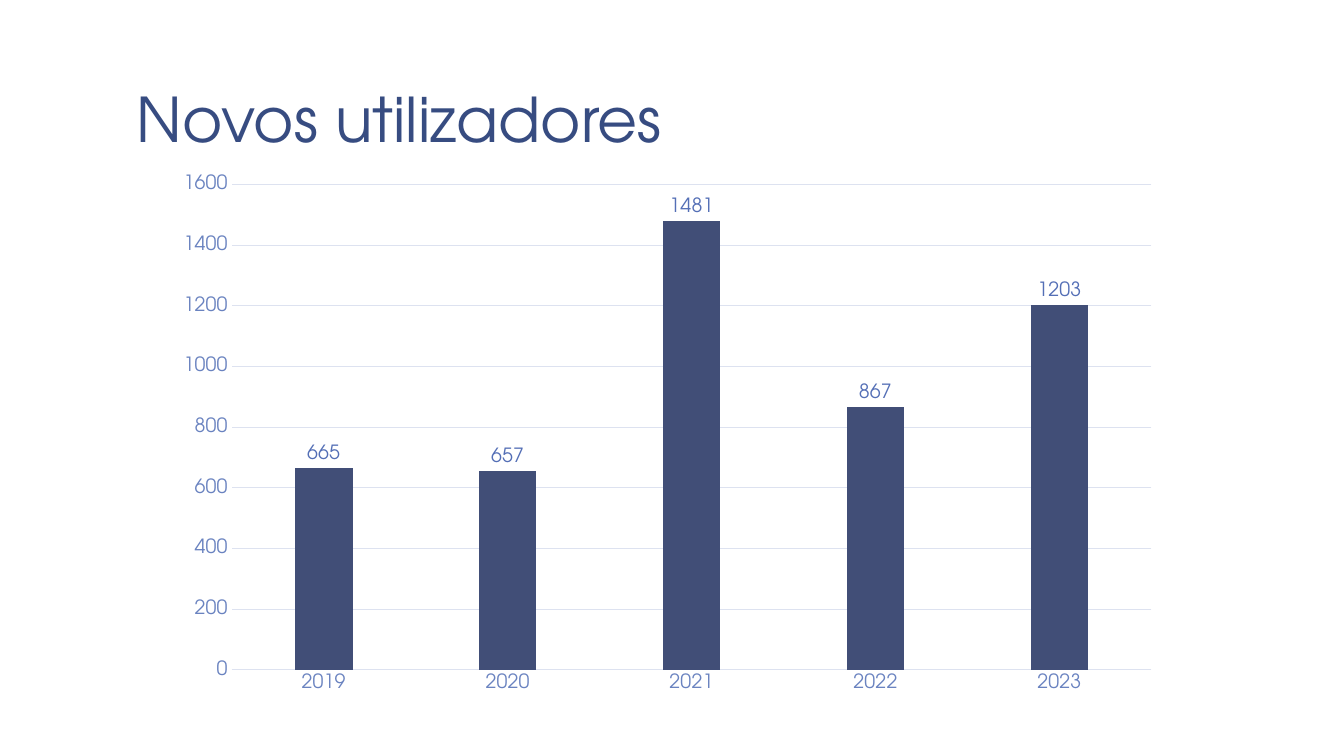
from pptx import Presentation
from pptx.chart import data
from pptx.dml.color import RGBColor
from pptx.enum import chart as ch, text
from pptx.util import Inches, Pt

FACE = "TeX Gyre Adventor"
HUES = {"title": "374C81", "bar": "414E77", "axis": "6A83C0",
        "label": "546FB6", "grid": "DDE2F0"}
YEARS = ["2019", "2020", "2021", "2022", "2023"]
USERS = [665, 657, 1481, 867, 1203]


def hue(key):
    return RGBColor.from_string(HUES[key])


def style(font, size, key):
    font.name = FACE
    font.size = Pt(size)
    font.bold = False
    font.color.rgb = hue(key)


def rule(line):
    line.color.rgb = hue("grid")
    line.width = Pt(0.75)


def add_title(slide, words):
    title = slide.shapes.title
    title.left, title.top = Inches(1.22), Inches(0.08)
    title.width, title.height = Inches(11.11), Inches(1.53)
    frame = title.text_frame
    frame.text = words
    frame.word_wrap = True
    frame.auto_size = text.MSO_AUTO_SIZE.NONE
    frame.vertical_anchor = text.MSO_ANCHOR.BOTTOM
    frame.margin_left = frame.margin_right = Inches(0.13)
    frame.margin_top = frame.margin_bottom = Inches(0.07)
    para = frame.paragraphs[0]
    para.alignment = text.PP_ALIGN.LEFT
    para.line_spacing = 0.85
    style(para.runs[0].font, 44, "title")


def style_axis(axis):
    axis.major_tick_mark = axis.minor_tick_mark = ch.XL_TICK_MARK.NONE
    style(axis.tick_labels.font, 14, "axis")


def add_bars(slide):
    table = data.CategoryChartData()
    table.categories = YEARS
    table.add_series("Series 1", USERS)
    chart = slide.shapes.add_chart(
        ch.XL_CHART_TYPE.COLUMN_CLUSTERED, Inches(1.62), Inches(1.63),
        Inches(10), Inches(5.35), table).chart
    chart.has_title = chart.has_legend = False
    style(chart.font, 14, "title")

    # Axes and grid
    years, users = chart.category_axis, chart.value_axis
    style_axis(years)
    style_axis(users)
    rule(years.format.line)
    users.format.line.fill.background()
    users.minimum_scale, users.maximum_scale, users.major_unit = 0, 1600, 200
    rule(users.major_gridlines.format.line)

    # Bars and their values
    plot = chart.plots[0]
    plot.vary_by_categories = False
    plot.gap_width, plot.overlap = 219, -27
    bars = plot.series[0]
    bars.format.fill.solid()
    bars.format.fill.fore_color.rgb = hue("bar")
    labels = bars.data_labels
    labels.show_value = True
    labels.position = ch.XL_LABEL_POSITION.OUTSIDE_END
    style(labels.font, 14, "label")


def main():
    deck = Presentation()
    deck.slide_width, deck.slide_height = Inches(13.33), Inches(7.5)
    slide = deck.slides.add_slide(deck.slide_layouts[5])
    add_title(slide, "Novos utilizadores")
    add_bars(slide)
    deck.save("out.pptx")


if __name__ == "__main__":
    main()
